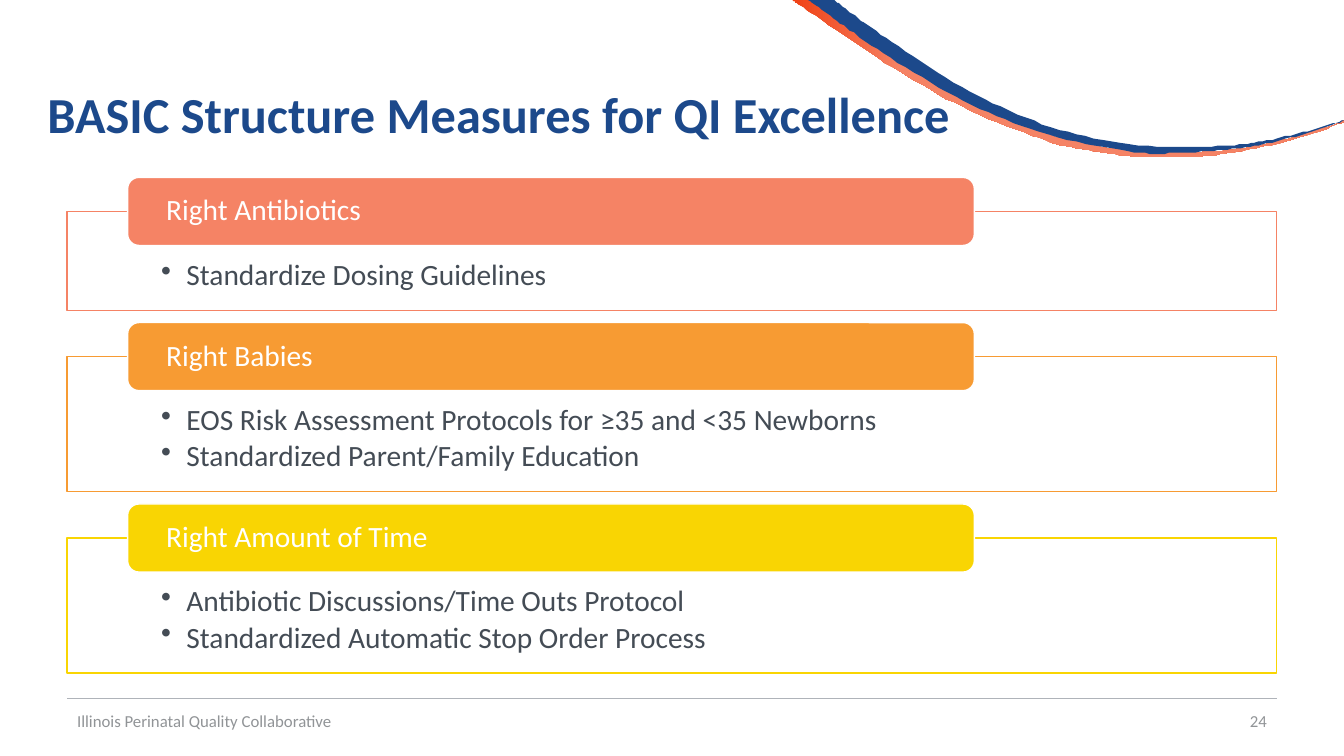
import pptx
import pptx.util
import pptx.dml.color
import pptx.enum.shapes
import pptx.enum.text
import pptx.oxml
import pptx.oxml.ns

Pt = pptx.util.Pt
RGB = pptx.dml.color.RGBColor.from_string
SHAPES = pptx.enum.shapes.MSO_SHAPE
ALIGN = pptx.enum.text.PP_ALIGN
ANCHOR = pptx.enum.text.MSO_ANCHOR

COLORS = {
    "navy": "1C498B", "red": "F04115", "coral": "F58365", "orange": "F79B33",
    "yellow": "F9D503", "slate": "444C55", "gray": "919497", "rule": "AFB3B9",
    "white": "FFFFFF",
}


def write(shape, text, size=21, color="slate", bold=False, align=ALIGN.LEFT,
          anchor=ANCHOR.MIDDLE, insets=(7.2, 3.6, 7.2, 3.6), spacing=1.0,
          bullet=False):
    """Fill a shape with text, one paragraph for each line."""
    frame = shape.text_frame
    frame.word_wrap = True
    frame.vertical_anchor = anchor
    (frame.margin_left, frame.margin_top,
     frame.margin_right, frame.margin_bottom) = [Pt(inset) for inset in insets]
    for number, line in enumerate(text.split("\n")):
        paragraph = frame.add_paragraph() if number else frame.paragraphs[0]
        paragraph.alignment = align
        paragraph.line_spacing = spacing
        if number:
            paragraph.space_before = Pt(3.1)
        if bullet:
            properties = paragraph._p.get_or_add_pPr()
            properties.set("marL", str(Pt(18)))
            properties.set("indent", str(-Pt(18)))
            mark = pptx.oxml.parse_xml(
                '<a:buChar %s char="•"/>' % pptx.oxml.ns.nsdecls("a"))
            properties.append(mark)
        run = paragraph.add_run()
        run.text = line
        run.font.name = "Calibri"
        run.font.size = Pt(size)
        run.font.bold = bold
        run.font.color.rgb = RGB(COLORS[color])


def smooth(knots, steps=10):
    """Return points on a Catmull-Rom curve through the knots."""
    padded = [knots[0], *knots, knots[-1]]
    points = []
    for a, b, c, d in zip(padded, padded[1:], padded[2:], padded[3:]):
        for step in range(steps):
            t = step / steps
            points.append(tuple(
                q + t / 2 * (r - p + t * (2 * p - 5 * q + 4 * r - s
                                          + t * (3 * (q - r) + s - p)))
                for p, q, r, s in zip(a, b, c, d)))
    return points + [knots[-1]]


deck = pptx.Presentation()
deck.slide_width, deck.slide_height = Pt(960), Pt(540)
slide = deck.slides.add_slide(deck.slide_layouts[6])
shapes = slide.shapes

# Swoosh: each ribbon has an upper edge, then a lower edge running back
coral_edges = (
    [(579.6, 0), (635, 38.9), (689.8, 71.3), (748.1, 95.8), (810, 108),
     (856.8, 108.7), (896.4, 104.4), (931, 95.8), (960, 86.4)],
    [(960, 87.1), (931.7, 97.2), (897.1, 105.8), (865.4, 110.9),
     (841.7, 112.3), (809.3, 111.6), (777.6, 107.3), (746.6, 100.1),
     (687.6, 76.3), (632.2, 44.6), (578.9, 8.6), (565.9, 0)],
)
navy_edges = (
    [(595.4, 0), (607, 8.6), (632.9, 27.4), (686.9, 61.9), (744.5, 88.6),
     (806.7, 103.2), (870.5, 104.4), (902.2, 100.8), (933.8, 93.6),
     (960, 85.7)],
    [(960, 86.4), (933.8, 95), (902.2, 103), (870.5, 107.3), (838.1, 109.4),
     (805.7, 108), (742.3, 94.3), (682.6, 69.1), (627.1, 35.3),
     (600.5, 16.6), (577.4, 0)],
)
for color, (upper, lower) in (("coral", coral_edges), ("navy", navy_edges)):
    start, *outline = smooth(upper) + smooth(lower)
    builder = shapes.build_freeform(*start, scale=Pt(1))
    builder.add_line_segments(outline, close=True)
    ribbon = builder.convert_to_shape()
    ribbon.shadow.inherit = False
    ribbon.line.fill.background()
    if color == "coral":
        ribbon.fill.gradient()
        ribbon.fill.gradient_angle = 0
        stops = ribbon.fill.gradient_stops
        for stop, shade, position in zip(stops, ("red", "coral"), (0, 0.2)):
            stop.color.rgb = RGB(COLORS[shade])
            stop.position = position
    else:
        ribbon.fill.solid()
        ribbon.fill.fore_color.rgb = RGB(COLORS[color])

# Title
title = shapes.add_textbox(Pt(26.8), Pt(28.8), Pt(864), Pt(104.4))
write(title, "BASIC Structure Measures for QI Excellence", size=36,
      color="navy", bold=True)

# Measures: a framed list with a coloured tab over its top edge
measures = [
    ("Right Antibiotics", "coral", 70.6, "Standardize Dosing Guidelines"),
    ("Right Babies", "orange", 96.5,
     "EOS Risk Assessment Protocols for ≥35 and <35 Newborns\n"
     "Standardized Parent/Family Education"),
    ("Right Amount of Time", "yellow", 96.5,
     "Antibiotic Discussions/Time Outs Protocol\n"
     "Standardized Automatic Stop Order Process"),
]
tab_top, tab_overlap, gap = 126.7, 24.4, 8.7
for heading, color, height, steps in measures:
    frame_top = tab_top + tab_overlap
    frame = shapes.add_shape(SHAPES.RECTANGLE, Pt(48), Pt(frame_top),
                             Pt(864), Pt(height))
    tab = shapes.add_shape(SHAPES.ROUNDED_RECTANGLE, Pt(91.2), Pt(tab_top),
                           Pt(604.8), Pt(48.6))
    for part, fill, line in ((frame, "white", color), (tab, color, "white")):
        part.shadow.inherit = False
        part.fill.solid()
        part.fill.fore_color.rgb = RGB(COLORS[fill])
        part.line.color.rgb = RGB(COLORS[line])
        part.line.width = Pt(1)
    write(frame, steps, anchor=ANCHOR.TOP, insets=(67.2, 34.6, 67.2, 11.5),
          spacing=0.9, bullet=True)
    write(tab, heading, color="white", insets=(25.2, 0, 25.2, 0), spacing=0.9)
    tab_top = frame_top + height + gap

# Footer
footer_rule = shapes.add_connector(pptx.enum.shapes.MSO_CONNECTOR.STRAIGHT,
                                   Pt(48), Pt(499), Pt(912), Pt(499))
footer_rule.line.color.rgb = RGB(COLORS["rule"])
footer_rule.line.width = Pt(0.5)
footer_rule._element.spPr.append(pptx.oxml.parse_xml(
    "<a:effectLst %s/>" % pptx.oxml.ns.nsdecls("a")))
page_number = shapes.add_textbox(Pt(696), Pt(500.4), Pt(216), Pt(28.8))
write(page_number, "24", size=12, color="gray", align=ALIGN.RIGHT)
organization = shapes.add_textbox(Pt(48), Pt(500.4), Pt(324), Pt(28.8))
write(organization, "Illinois Perinatal Quality Collaborative", size=12,
      color="gray")

deck.save("out.pptx")
